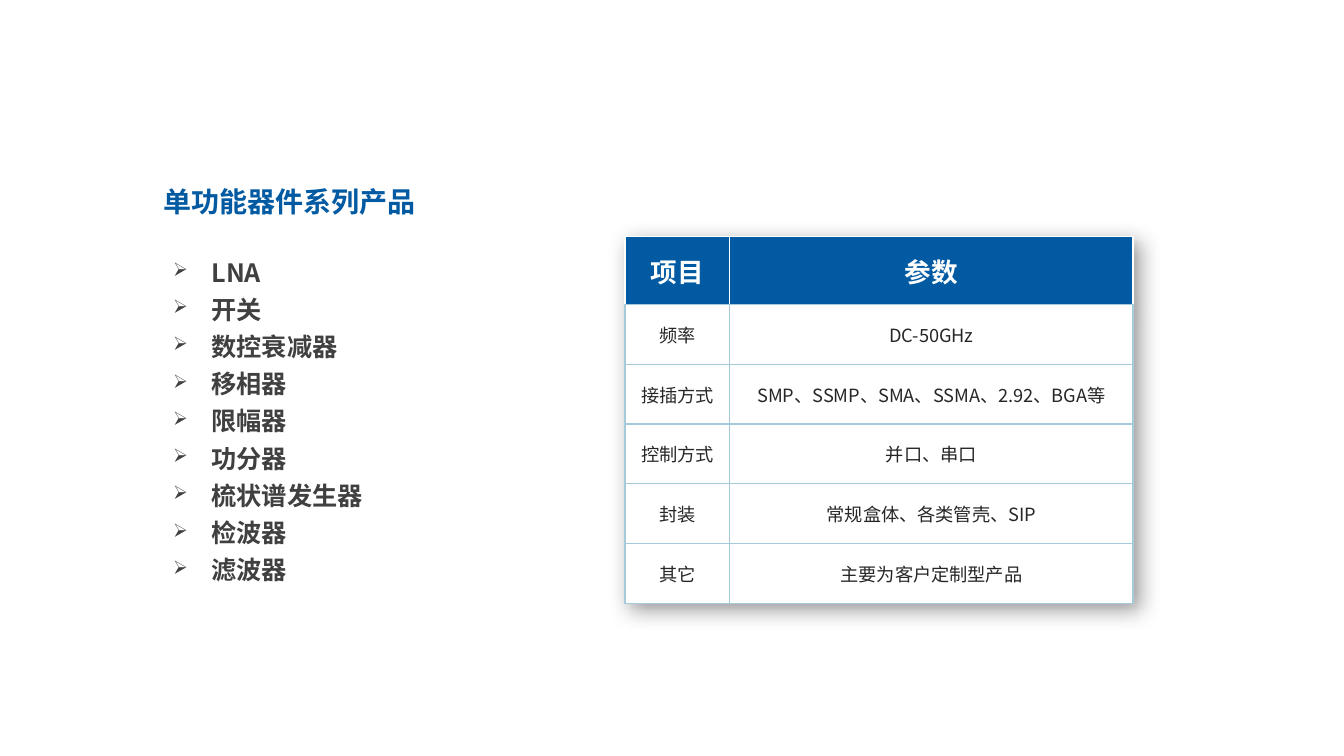
from dataclasses import dataclass

from lxml.etree import SubElement
from pptx import Presentation
from pptx.dml.color import RGBColor
from pptx.enum.text import MSO_ANCHOR as Anchor, PP_ALIGN as Align
from pptx.oxml import parse_xml
from pptx.oxml.ns import nsdecls, qn
from pptx.util import Inches, Pt

SLIDE_WIDTH, SLIDE_HEIGHT = Inches(13.33), Inches(7.5)


@dataclass(frozen=True)
class Theme:
    font: str = "Noto Sans CJK SC"
    blue: str = "025AA2"
    rule: str = "A5CADA"
    white: str = "FFFFFF"
    bullet_text: str = "404040"
    cell_text: str = "262626"
    title_size: int = 20
    bullet_size: int = 18
    header_size: int = 19
    cell_size: int = 13


THEME = Theme()

TITLE = "单功能器件系列产品"
PRODUCTS = ["LNA", "开关", "数控衰减器", "移相器", "限幅器", "功分器",
            "梳状谱发生器", "检波器", "滤波器"]
PARAMETERS = [
    ("项目", "参数"),
    ("频率", "DC-50GHz"),
    ("接插方式", "SMP、SSMP、SMA、SSMA、2.92、BGA等"),
    ("控制方式", "并口、串口"),
    ("封装", "常规盒体、各类管壳、SIP"),
    ("其它", "主要为客户定制型产品"),
]


def across(percent):
    return round(SLIDE_WIDTH * percent / 100)


def down(percent):
    return round(SLIDE_HEIGHT * percent / 100)


def style(para, size, color, bold):
    font = para.font
    font.size, font.bold, font.name = Pt(size), bold, THEME.font
    font.color.rgb = RGBColor.from_string(color)
    defaults = para._p.pPr.find(qn("a:defRPr"))
    SubElement(defaults, qn("a:ea")).set("typeface", THEME.font)


def add_box(page, left, top, width, height):
    """Add a wrapping text box placed in percent of the slide; return its frame."""
    box = page.shapes.add_textbox(across(left), down(top), across(width), down(height))
    box.text_frame.word_wrap = True
    return box.text_frame


def add_title(page):
    para = add_box(page, 11.4, 23.73, 23.63, 5.87).paragraphs[0]
    para.text = TITLE
    style(para, THEME.title_size, THEME.blue, True)


def add_bullet(para):
    properties = para._p.get_or_add_pPr()
    indent = Inches(0.38)
    properties.set("marL", str(indent))
    properties.set("indent", str(-indent))
    SubElement(properties, qn("a:buSzPct")).set("val", "75000")
    SubElement(properties, qn("a:buChar")).set("char", "➢")


def add_product_list(page):
    frame = add_box(page, 12.15, 33.07, 22.88, 46.53)
    for index, product in enumerate(PRODUCTS):
        para = frame.add_paragraph() if index else frame.paragraphs[0]
        para.text = product
        add_bullet(para)
        para.line_spacing = Pt(23)
        if index:
            para.space_before = Pt(3.6)
        style(para, THEME.bullet_size, THEME.bullet_text, True)


def set_borders(cell, sides):
    """Draw one-point borders; sides maps L, R, T and B, in that order, to colours."""
    properties = cell._tc.get_or_add_tcPr()
    for position, (side, color) in enumerate(sides.items()):
        properties.insert(position, parse_xml(
            f'<a:ln{side} {nsdecls("a")} w="{Pt(1)}"><a:solidFill>'
            f'<a:srgbClr val="{color}"/></a:solidFill></a:ln{side}>'))


def fill_cell(cell, text, is_header):
    cell.fill.solid()
    cell.fill.fore_color.rgb = RGBColor.from_string(THEME.blue if is_header else THEME.white)
    cell.vertical_anchor = Anchor.MIDDLE
    cell.margin_left = cell.margin_right = Inches(0.13)
    cell.margin_top = cell.margin_bottom = Inches(0.05)
    para = cell.text_frame.paragraphs[0]
    para.text = text
    para.alignment = Align.CENTER
    edge = THEME.white if is_header else THEME.rule
    set_borders(cell, {"L": edge, "R": edge, "T": edge, "B": THEME.rule})
    if is_header:
        style(para, THEME.header_size, THEME.white, True)
    else:
        style(para, THEME.cell_size, THEME.cell_text, False)


def add_table_shadow(table):
    table._tbl.tblPr.insert(0, parse_xml(
        f'<a:effectLst {nsdecls("a")}><a:outerShdw blurRad="{Pt(15)}" dist="{Pt(5)}" '
        'dir="2700000" algn="tl" rotWithShape="0"><a:srgbClr val="000000">'
        '<a:alpha val="40000"/></a:srgbClr></a:outerShdw></a:effectLst>'))


def add_parameter_table(page):
    widths = [7.8, 30]
    heights = [8.93] + [7.92] * (len(PARAMETERS) - 1)
    table = page.shapes.add_table(
        len(heights), len(widths), across(46.5), down(31.33),
        across(sum(widths)), down(sum(heights))).table
    add_table_shadow(table)
    for column, width in zip(table.columns, widths):
        column.width = across(width)
    for index, (row, height, texts) in enumerate(zip(table.rows, heights, PARAMETERS)):
        row.height = down(height)
        for cell, text in zip(row.cells, texts):
            fill_cell(cell, text, is_header=index == 0)


def main():
    deck = Presentation()
    deck.slide_width, deck.slide_height = SLIDE_WIDTH, SLIDE_HEIGHT
    page = deck.slides.add_slide(deck.slide_layouts[6])
    add_title(page)
    add_product_list(page)
    add_parameter_table(page)
    deck.save("out.pptx")


if __name__ == "__main__":
    main()
